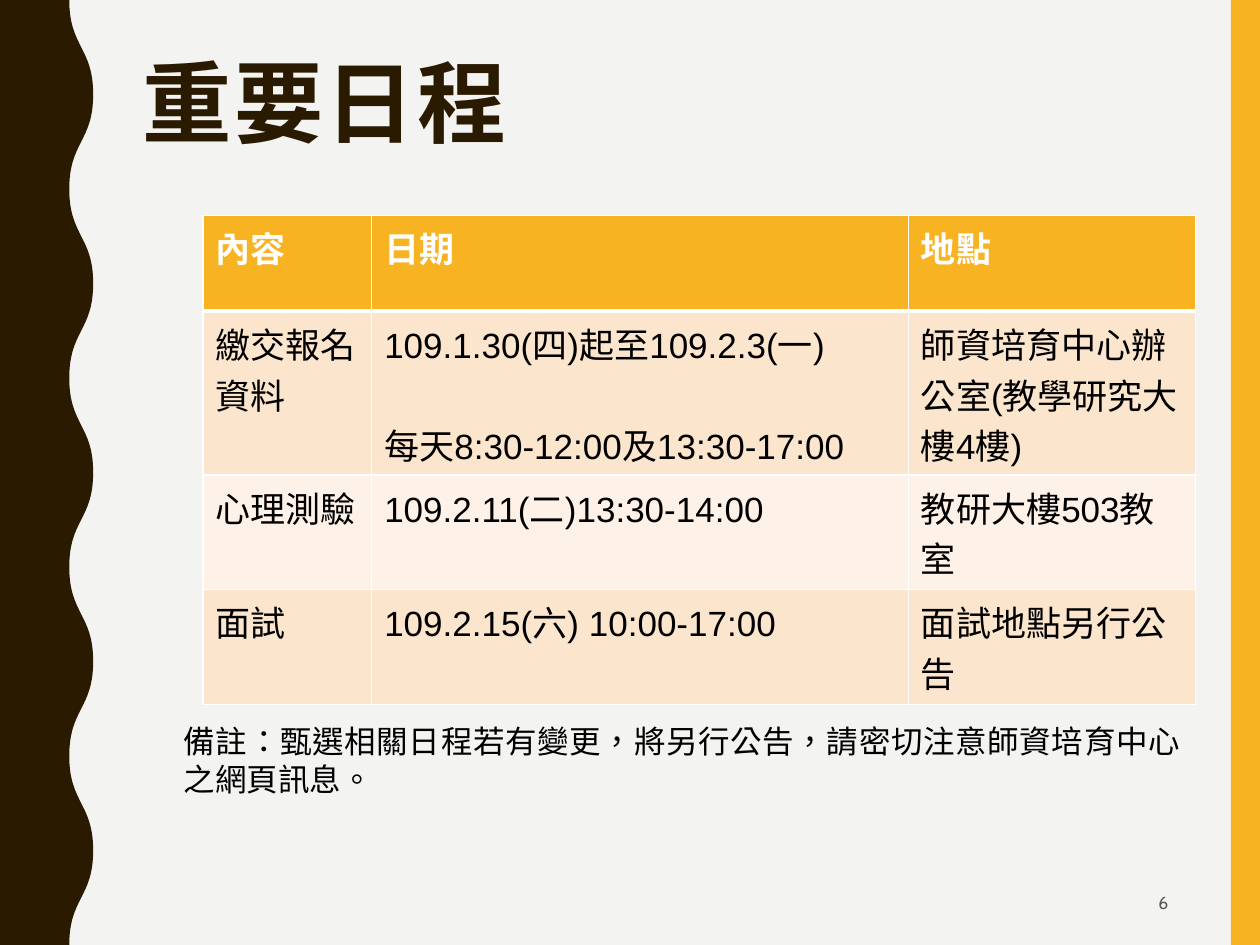
from pptx import Presentation
from pptx.dml.color import RGBColor
from pptx.enum.shapes import MSO_SHAPE
from pptx.enum.text import MSO_ANCHOR, PP_ALIGN
from pptx.oxml.ns import qn
from pptx.util import Inches, Pt
from lxml.etree import SubElement

TITLE = "重要日程"
NOTE = "備註：甄選相關日程若有變更，將另行公告，請密切注意師資培育中心之網頁訊息。"
PAGE = "6"
ROWS = [
    ["內容", "日期", "地點"],
    ["繳交報名資料", "109.1.30(四)起至109.2.3(一)\n每天8:30-12:00及13:30-17:00",
     "師資培育中心辦公室(教學研究大樓4樓)"],
    ["心理測驗", "109.2.11(二)13:30-14:00", "教研大樓503教室"],
    ["面試", "109.2.15(六) 10:00-17:00", "面試地點另行公告"],
]
COL_WIDTHS = [1.34, 4.26, 2.28]
ROW_HEIGHTS = [0.76, 1.3, 0.91, 0.91]

THEME = {
    "bg": "F3F3F2", "accent": "F8B323", "dark": "2A1A00", "white": "FFFFFF",
    "black": "000000", "grey": "595959", "bands": ["FCE5CD", "FEF2E8"],
    "title": ("Roboto Condensed", 51), "table": ("Arial", 20),
    "note": ("Times New Roman", 18), "page": ("Cabin", 10),
}


def color(name):
    return RGBColor.from_string(THEME.get(name, name))


def style(p, role, ink, bold=False):
    face, size = THEME[role]
    for r in p.runs:
        r.font.name, r.font.size, r.font.bold = face, Pt(size), bold
        r.font.color.rgb = color(ink)
        r.font._element.set("lang", "zh-TW")


def paint(sp, fill):
    sp.fill.solid()
    sp.fill.fore_color.rgb = color(fill)
    sp.line.fill.background()
    sp.shadow.inherit = False


def add_wave(s, inner=0.55, outer=0.74, half=0.75, count=10):
    crests = [(outer if i % 2 else inner, half * i) for i in range(count + 1)]
    fb = s.shapes.build_freeform(Inches(0), Inches(0))
    fb.add_line_segments([(Inches(x), Inches(y)) for x, y in [*crests, (0, half * count)]])
    sp = fb.convert_to_shape()
    paint(sp, "dark")
    lines = list(sp._element.iter(qn("a:lnTo")))[1:count + 1]
    for line, (x0, y0), (x1, y1) in zip(lines, crests, crests[1:]):
        middle = (y0 + y1) / 2
        line.tag
        curve = line.makeelement(qn("a:cubicBezTo"))
        for x, y in ((x0, middle), (x1, middle), (x1, y1)):
            SubElement(curve, qn("a:pt"), x=str(Inches(x)), y=str(Inches(y)))
        line.getparent().replace(line, curve)


def add_text(s, text, box, role, ink, align):
    tf = s.shapes.add_textbox(*map(Inches, box)).text_frame
    tf.word_wrap = True
    tf.text = text
    p = tf.paragraphs[0]
    p.alignment = align
    style(p, role, ink)
    return tf


def set_borders(cell, header):
    tcPr = cell._tc.get_or_add_tcPr()
    for i, side in enumerate(("lnL", "lnR", "lnT", "lnB")):
        width = 3 if header and side == "lnB" else 1
        ln = SubElement(tcPr, qn(f"a:{side}"), w=str(Pt(width)))
        fill = SubElement(ln, qn("a:solidFill"))
        SubElement(fill, qn("a:srgbClr"), val=THEME["white"])
        tcPr.insert(i, ln)


def add_schedule(s):
    frame = s.shapes.add_table(len(ROWS), len(COL_WIDTHS), Inches(1.61), Inches(1.71),
                               Inches(sum(COL_WIDTHS)), Inches(sum(ROW_HEIGHTS)))
    table = frame.table
    for col, width in zip(table.columns, COL_WIDTHS):
        col.width = Inches(width)
    for i, (row, height) in enumerate(zip(table.rows, ROW_HEIGHTS)):
        row.height = Inches(height)
        header = i == 0
        for cell, text in zip(row.cells, ROWS[i]):
            cell.text = text
            cell.fill.solid()
            cell.fill.fore_color.rgb = color("accent" if header else THEME["bands"][(i - 1) % 2])
            for n, p in enumerate(cell.text_frame.paragraphs):
                p.space_before = Pt(29 * n)
                style(p, "table", "white" if header else "black", header)
            set_borders(cell, header)


def main():
    prs = Presentation()
    prs.slide_width, prs.slide_height = Inches(10), Inches(7.5)
    s = prs.slides.add_slide(prs.slide_layouts[5])
    s.background.fill.solid()
    s.background.fill.fore_color.rgb = color("bg")

    bar = s.shapes.add_shape(MSO_SHAPE.RECTANGLE, Inches(9.77), 0, Inches(0.23), Inches(7.5))
    paint(bar, "accent")
    add_wave(s)

    title = s.shapes.title
    title.left, title.top, title.width, title.height = map(Inches, (1.03, 0.42, 8.35, 1.63))
    tf = title.text_frame
    tf.text = TITLE
    tf.vertical_anchor = MSO_ANCHOR.TOP
    p = tf.paragraphs[0]
    p.alignment, p.line_spacing = PP_ALIGN.LEFT, 0.9
    style(p, "title", "dark", True)
    p.runs[0].font._element.set("spc", "150")

    page = add_text(s, PAGE, (7.06, 6.97, 2.31, 0.38), "page", "grey", PP_ALIGN.RIGHT)
    page.vertical_anchor = MSO_ANCHOR.MIDDLE
    add_schedule(s)
    add_text(s, NOTE, (1.36, 5.68, 8.11, 0.71), "note", "black", PP_ALIGN.JUSTIFY)
    prs.save("out.pptx")


if __name__ == "__main__":
    main()
